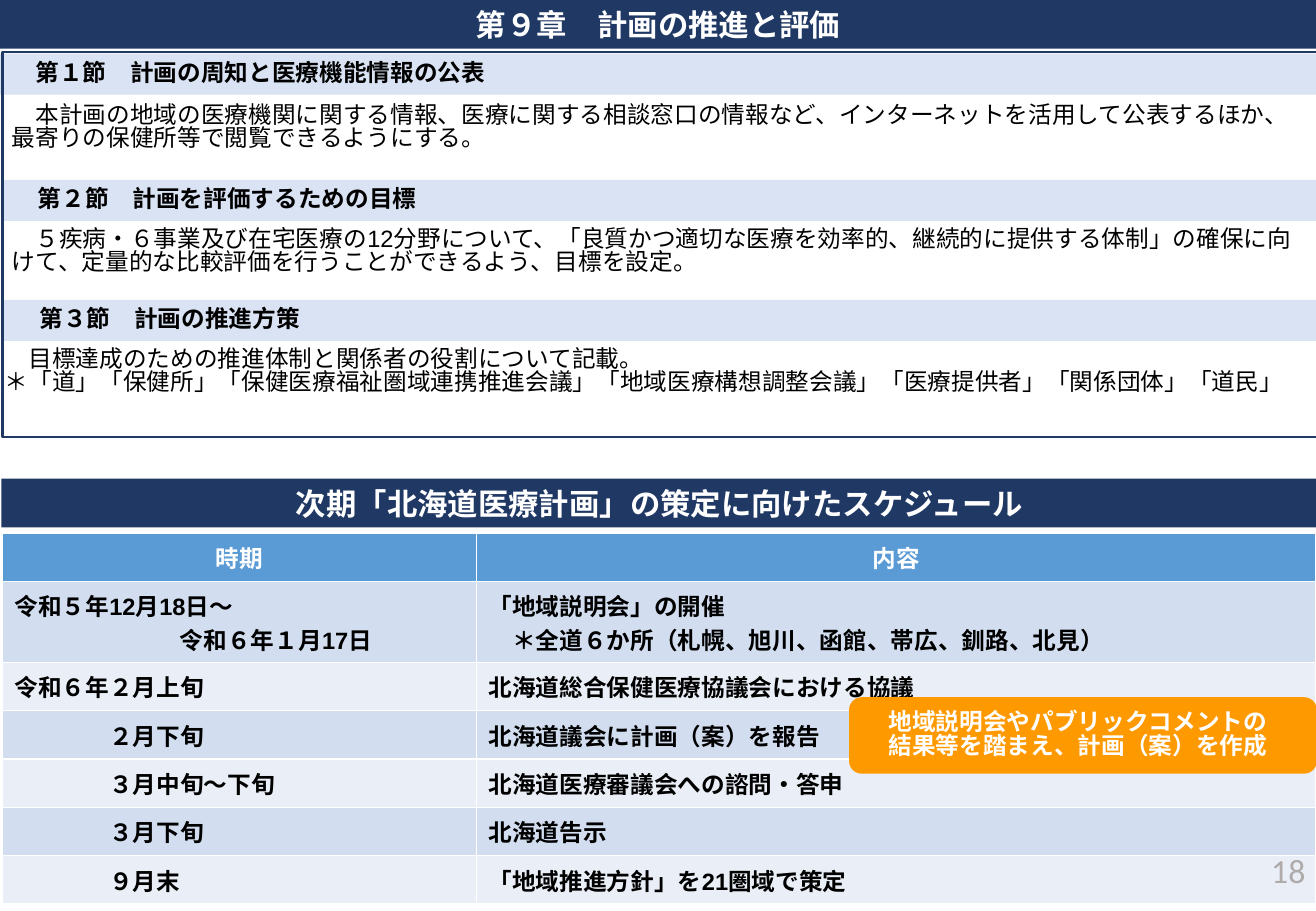
"""Build the slide on plan promotion, evaluation and schedule."""
from dataclasses import dataclass

from pptx import Presentation
from pptx.dml.color import RGBColor as Rgb
from pptx.enum.shapes import MSO_SHAPE as Kind
from pptx.enum.text import MSO_ANCHOR as Anchor, PP_ALIGN as Align
from pptx.util import Cm, Pt


@dataclass(frozen=True)
class Theme:
    navy: str = "203864"
    pale: str = "DAE3F3"
    blue: str = "5B9BD5"
    bands: tuple = ("D2DEEF", "EAEFF7")
    amber: str = "FF9900"
    white: str = "FFFFFF"
    black: str = "000000"
    grey: str = "AFABAB"
    head: int = 18
    body: int = 14
    page: int = 20
    base: str = "Calibri"
    alt: str = "Arial"


class Deck:
    def __init__(self, theme, wide, high):
        self.theme = theme
        self.show = Presentation()
        self.show.slide_width, self.show.slide_height = Cm(wide), Cm(high)
        self.slide = self.show.slides.add_slide(self.show.slide_layouts[5])

    def paint(self, item, color):
        item.fill.solid()
        item.fill.fore_color.rgb = Rgb.from_string(color)

    def label(self, frame, lines, color, size=None, bold=False, align=Align.LEFT,
              font=None, space=None):
        frame.word_wrap = True
        for n, line in enumerate(lines):
            para = frame.paragraphs[0] if n == 0 else frame.add_paragraph()
            para.alignment = align
            para.line_spacing = space
            face = para.font
            face.name = font or self.theme.base
            face.size = Pt(size or self.theme.body)
            face.bold = bold
            face.color.rgb = Rgb.from_string(color)
            for k, part in enumerate(line.split("|")):
                run = para.add_run()
                run.text = part
                if k % 2:
                    run.font.name = self.theme.alt

    def banner(self, item, text):
        self.paint(item, self.theme.navy)
        item.text_frame.vertical_anchor = Anchor.MIDDLE
        self.label(item.text_frame, [text], self.theme.white, self.theme.head, True,
                   Align.CENTER)

    def title(self, text, *box):
        item = self.slide.shapes.title
        item.left, item.top, item.width, item.height = map(Cm, box)
        self.banner(item, text)

    def shape(self, kind, *box):
        item = self.slide.shapes.add_shape(kind, *map(Cm, box))
        item.shadow.inherit = False
        item.line.fill.background()
        return item

    def bar(self, text, *box):
        self.banner(self.shape(Kind.RECTANGLE, *box), text)

    def panel(self, lines, fill, color, kind, *box):
        item = self.shape(kind, *box)
        self.paint(item, fill)
        item.text_frame.vertical_anchor = Anchor.MIDDLE
        self.label(item.text_frame, lines, color, bold=True, space=0.83)

    def frame(self, *box):
        item = self.shape(Kind.RECTANGLE, *box)
        item.fill.background()
        item.line.color.rgb = Rgb.from_string(self.theme.navy)
        item.line.width = Pt(1.5)

    def note(self, lines, color, *box, anchor=Anchor.TOP, **style):
        frame = self.slide.shapes.add_textbox(*map(Cm, box)).text_frame
        frame.vertical_anchor = anchor
        self.label(frame, lines, color, **style)

    def cell(self, cell, lines, fill, color, **style):
        self.paint(cell, fill)
        cell.vertical_anchor = Anchor.MIDDLE
        self.label(cell.text_frame, lines, color, bold=True, **style)

    def table(self, heads, rows, cols, highs, left, top):
        look = self.theme
        grid = self.slide.shapes.add_table(
            len(highs), len(cols), Cm(left), Cm(top), Cm(sum(cols)), Cm(sum(highs))).table
        for col, wide in zip(grid.columns, cols):
            col.width = Cm(wide)
        for row, high in zip(grid.rows, highs):
            row.height = Cm(high)
        for c, text in enumerate(heads):
            self.cell(grid.cell(0, c), [text], look.blue, look.white, align=Align.CENTER)
        for r, (steps, *texts) in enumerate(rows, 1):
            for c, lines in enumerate(texts):
                self.cell(grid.cell(r, c), lines, look.bands[(r - 1) % 2], look.black,
                          font=look.alt)
            last = grid.cell(r, 0).text_frame.paragraphs[-1]
            if steps:
                last._p.get_or_add_pPr().set("marL", str(Pt(steps * look.body)))


PARTS = [
    (0, 1.12, "第１節　計画の周知と医療機能情報の公表", 0, 2.06, Theme.alt,
     ["　本計画の地域の医療機関に関する情報、医療に関する相談窓口の情報など、"
      "インターネットを活用して公表するほか、最寄りの保健所等で閲覧できるようにする。"]),
    (0.05, 3.76, "第２節　計画を評価するための目標", 0, 4.65, Theme.base,
     ["　５疾病・６事業及び在宅医療の|12|分野について、「良質かつ適切な医療を効率的、"
      "継続的に提供する体制」の確保に向けて、定量的な比較評価を行うことができるよう、"
      "目標を設定。"]),
    (0.08, 6.27, "第３節　計画の推進方策", -0.15, 7.16, Theme.base,
     ["　目標達成のための推進体制と関係者の役割について記載。",
      "＊「道」「保健所」「保健医療福祉圏域連携推進会議」「地域医療構想調整会議」"
      "「医療提供者」「関係団体」「道民」"]),
]
DATES = [
    (7, ["令和５年12月18日～", "令和６年１月17日"],
     ["「地域説明会」の開催", "　＊全道６か所（札幌、旭川、函館、帯広、釧路、北見）"]),
    (0, ["令和６年２月上旬"], ["北海道総合保健医療協議会における協議"]),
    (4, ["２月下旬"], ["北海道議会に計画（案）を報告"]),
    (4, ["３月中旬～下旬"], ["北海道医療審議会への諮問・答申"]),
    (4, ["３月下旬"], ["北海道告示"]),
    (4, ["９月末"], ["「地域推進方針」を21圏域で策定"]),
]


def main():
    look = Theme()
    wide = 27.51
    deck = Deck(look, wide, 19.05)
    deck.title("第９章　計画の推進と評価", 0, 0, wide, 1.02)
    for left, top, head, edge, start, font, lines in PARTS:
        deck.panel(["　" + head], look.pale, look.black, Kind.RECTANGLE,
                   left, top, wide - left, 0.86)
        deck.note(lines, look.black, edge, start, wide - edge, 1.45, font=font, space=0.83)
    deck.frame(0.05, 1.09, 27.48, 8.05)
    deck.bar("次期「北海道医療計画」の策定に向けたスケジュール", 0.03, 10.01, wide, 1.02)
    deck.table(["時期", "内容"], DATES, [9.91, 17.55], [1.01, 1.69] + [1.01] * 5, 0.05, 11.15)
    deck.panel(["　地域説明会やパブリックコメントの", "　結果等を踏まえ、計画（案）を作成"],
               look.amber, look.white, Kind.ROUNDED_RECTANGLE, 17.75, 14.58, 9.78, 1.6)
    deck.note(["18"], look.grey, 21.34, 17.68, 6.2, 1.02, anchor=Anchor.MIDDLE,
              size=look.page, align=Align.RIGHT)
    deck.show.save("out.pptx")


if __name__ == "__main__":
    main()
